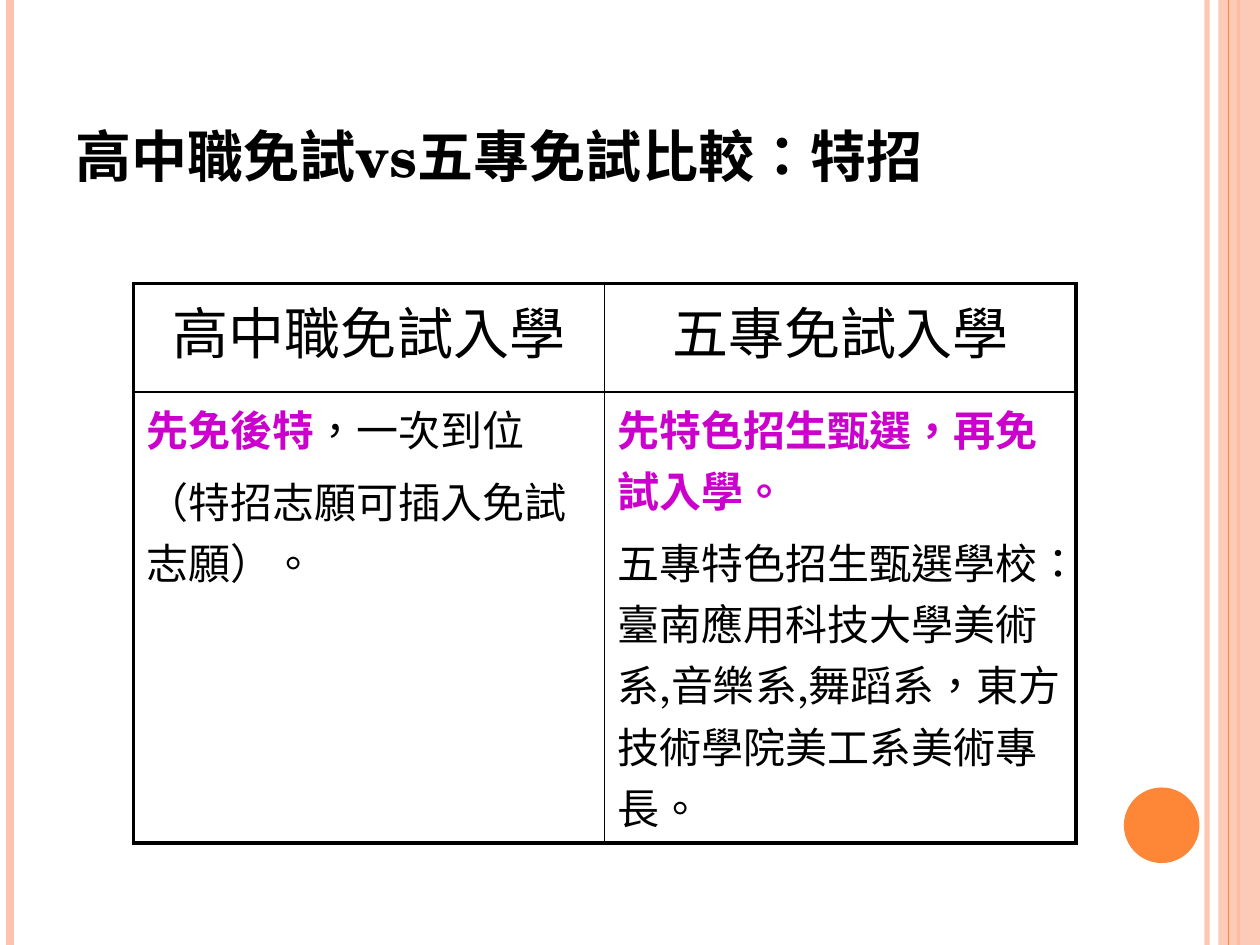
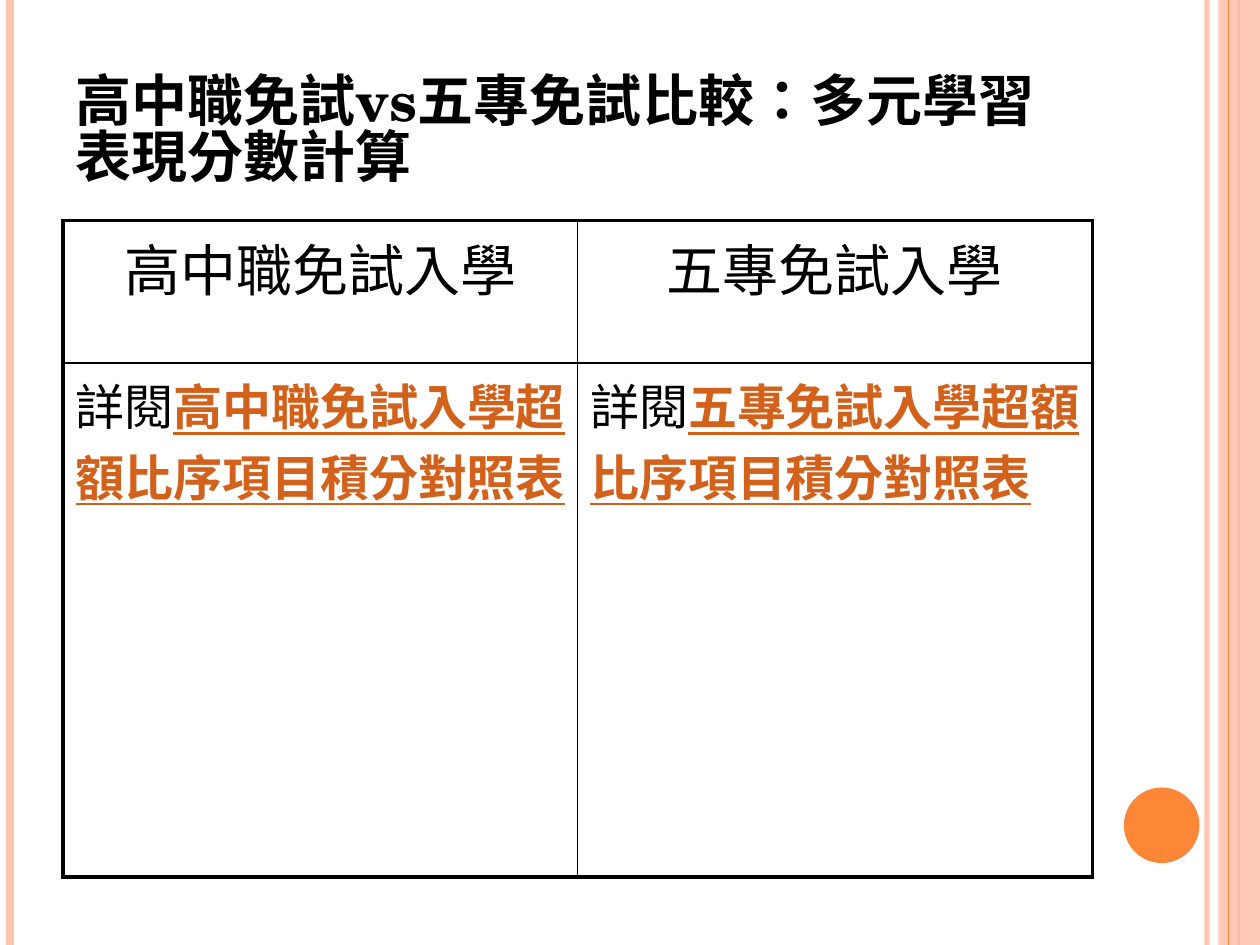
from lxml.etree import SubElement
from pptx import Presentation
from pptx.dml.color import RGBColor
from pptx.enum.lang import MSO_LANGUAGE_ID
from pptx.enum.shapes import MSO_CONNECTOR, MSO_SHAPE
from pptx.enum.text import MSO_ANCHOR, MSO_AUTO_SIZE, PP_ALIGN
from pptx.oxml import parse_xml
from pptx.oxml.ns import nsdecls, qn
from pptx.util import Inches, Pt

PEACH = RGBColor(0xFE, 0xC3, 0xAE)
ORANGE = RGBColor(0xFE, 0x86, 0x37)
BLACK = RGBColor(0x00, 0x00, 0x00)
MAGENTA = RGBColor(0xCC, 0x00, 0xCC)
RUST = RGBColor(0xD2, 0x61, 0x1C)
SERIF = "TeX Gyre Schola"
SANS = "Noto Sans CJK SC"
TITLE_BOX = (0.5, 0.3, 8.17, 1.25)
HEADINGS = ("高中職免試入學", "五專免試入學")
PLAIN = {"color": BLACK}
STRESS = {"color": MAGENTA, "bold": True}
REFERENCE = {"color": RUST, "bold": True, "underline": True}


def set_alpha(fill_owner, percent):
    """Make the solid colour inside an element partly transparent."""
    color = next(fill_owner.iter(qn("a:srgbClr")))
    SubElement(color, qn("a:alpha"), val=str(percent * 1000))


def add_rule(page, left, height, color, weight):
    """Draw one vertical rule from the top edge of the page."""
    x = Inches(left)
    rule = page.shapes.add_connector(MSO_CONNECTOR.STRAIGHT, x, 0, x, height)
    rule.line.color.rgb = color
    rule.line.width = Pt(weight)
    SubElement(rule.element.spPr, qn("a:effectLst"))
    return rule


def add_plain_shape(page, kind, box, color):
    """Draw a flat shape without outline."""
    shape = page.shapes.add_shape(kind, *map(Inches, box))
    shape.shadow.inherit = False
    shape.fill.solid()
    shape.fill.fore_color.rgb = color
    shape.line.fill.background()
    return shape


def decorate_layout(page, height):
    """Draw the side bands and the dot, then hand them to the page's layout."""
    pale_rule = add_rule(page, 9.58, height, PEACH, 3)
    set_alpha(pale_rule.element, 93)
    left_rule = add_rule(page, 0.08, height, PEACH, 4.5)
    outer_rule = add_rule(page, 9.83, height, ORANGE, 1.5)
    band = add_plain_shape(page, MSO_SHAPE.RECTANGLE, (9.67, 0, 0.33, 7.5), PEACH)
    set_alpha(band.element, 87)
    inner_rule = add_rule(page, 9.75, height, ORANGE, 0.75)
    dot = add_plain_shape(page, MSO_SHAPE.OVAL, (8.92, 6.25, 0.6, 0.6), ORANGE)
    for part in (pale_rule, left_rule, outer_rule, band, inner_rule, dot):
        page.slide_layout.shapes.element.append(part.element)


def set_font(para, name, size):
    """Set the typeface, size and language of a paragraph."""
    para.font.name = name
    para.font.size = Pt(size)
    para.font.language_id = MSO_LANGUAGE_ID.TRADITIONAL_CHINESE


def fill_title(page, text):
    """Place and format the title placeholder."""
    title = page.shapes.title
    title.left, title.top, title.width, title.height = map(Inches, TITLE_BOX)
    frame = title.text_frame
    frame.text = text
    frame.auto_size = MSO_AUTO_SIZE.NONE
    frame.vertical_anchor = MSO_ANCHOR.BOTTOM
    para = frame.paragraphs[0]
    para.alignment = PP_ALIGN.LEFT
    para.line_spacing = 0.83
    set_font(para, SERIF, 32)
    para.font.bold = True
    para.font.color.rgb = BLACK


def set_borders(cell, weights):
    """Draw the left, right, top and bottom borders of a cell."""
    properties = cell._tc.get_or_add_tcPr()
    for index, (side, weight) in enumerate(zip("LRTB", weights)):
        properties.insert(index, parse_xml(
            f'<a:ln{side} {nsdecls("a")} w="{Pt(weight)}"><a:solidFill>'
            f'<a:srgbClr val="{BLACK}"/></a:solidFill></a:ln{side}>'))


def fill_cell(cell, paragraphs, name, size, alignment):
    """Write paragraphs, each a list of (text, style) spans, into a cell."""
    frame = cell.text_frame
    for index, spans in enumerate(paragraphs):
        para = frame.add_paragraph() if index else frame.paragraphs[0]
        para.alignment = alignment
        para.space_before = Pt(6)
        set_font(para, name, size)
        for text, style in spans:
            span = para.add_run()
            span.text = text
            span.font.color.rgb = style["color"]
            span.font.bold = style.get("bold", False)
            span.font.underline = style.get("underline", False)


def add_comparison(page, box, row_heights, answers, name, size):
    """Draw the two-column comparison table in the given box."""
    table = page.shapes.add_table(2, 2, *map(Inches, box)).table
    table.first_row = table.horz_banding = False
    for row, height in zip(table.rows, row_heights):
        row.height = Inches(height)
    for column, (heading, answer) in enumerate(zip(HEADINGS, answers)):
        head, body = table.cell(0, column), table.cell(1, column)
        fill_cell(head, [[(heading, PLAIN)]], SERIF, 32, PP_ALIGN.CENTER)
        fill_cell(body, answer, name, size, PP_ALIGN.LEFT)
        sides = (1, 2.25) if column else (2.25, 1)
        for cell, ends in ((head, (2.25, 1)), (body, (1, 2.25))):
            cell.fill.background()
            set_borders(cell, sides + ends)


def build_admission_page(page):
    """Compare how special admission is ordered."""
    fill_title(page, "高中職免試vs五專免試比較：特招")
    answers = (
        [[("先免後特", STRESS), ("，一次到位", PLAIN)],
         [("（特招志願可插入免試志願）。", PLAIN)]],
        [[("先特色招生甄選，再免試入學。", STRESS)],
         [("五專特色招生甄選學校：臺南應用科技大學美術系,音樂系,舞蹈系，"
           "東方技術學院美工系美術專長。", PLAIN)]],
    )
    add_comparison(page, (1.06, 2.25, 7.48, 4.1), (0.86, 3.23), answers, SERIF, 24)


def build_score_page(page):
    """Compare how diverse learning scores are counted."""
    fill_title(page, "高中職免試vs五專免試比較：多元學習表現分數計算")
    answers = [[[("詳閱", PLAIN), (f"{heading}超額比序項目積分對照表", REFERENCE)]]
               for heading in HEADINGS]
    add_comparison(page, (0.5, 1.75, 8.17, 5.21), (1.13, 4.08), answers, SANS, 28)


def main():
    """Build the deck and save it."""
    deck = Presentation()
    deck.slide_width, deck.slide_height = Inches(10), Inches(7.5)
    layout = deck.slide_layouts[5]
    pages = [deck.slides.add_slide(layout) for _ in range(2)]
    decorate_layout(pages[0], deck.slide_height)
    build_admission_page(pages[0])
    build_score_page(pages[1])
    deck.save("out.pptx")


if __name__ == "__main__":
    main()
